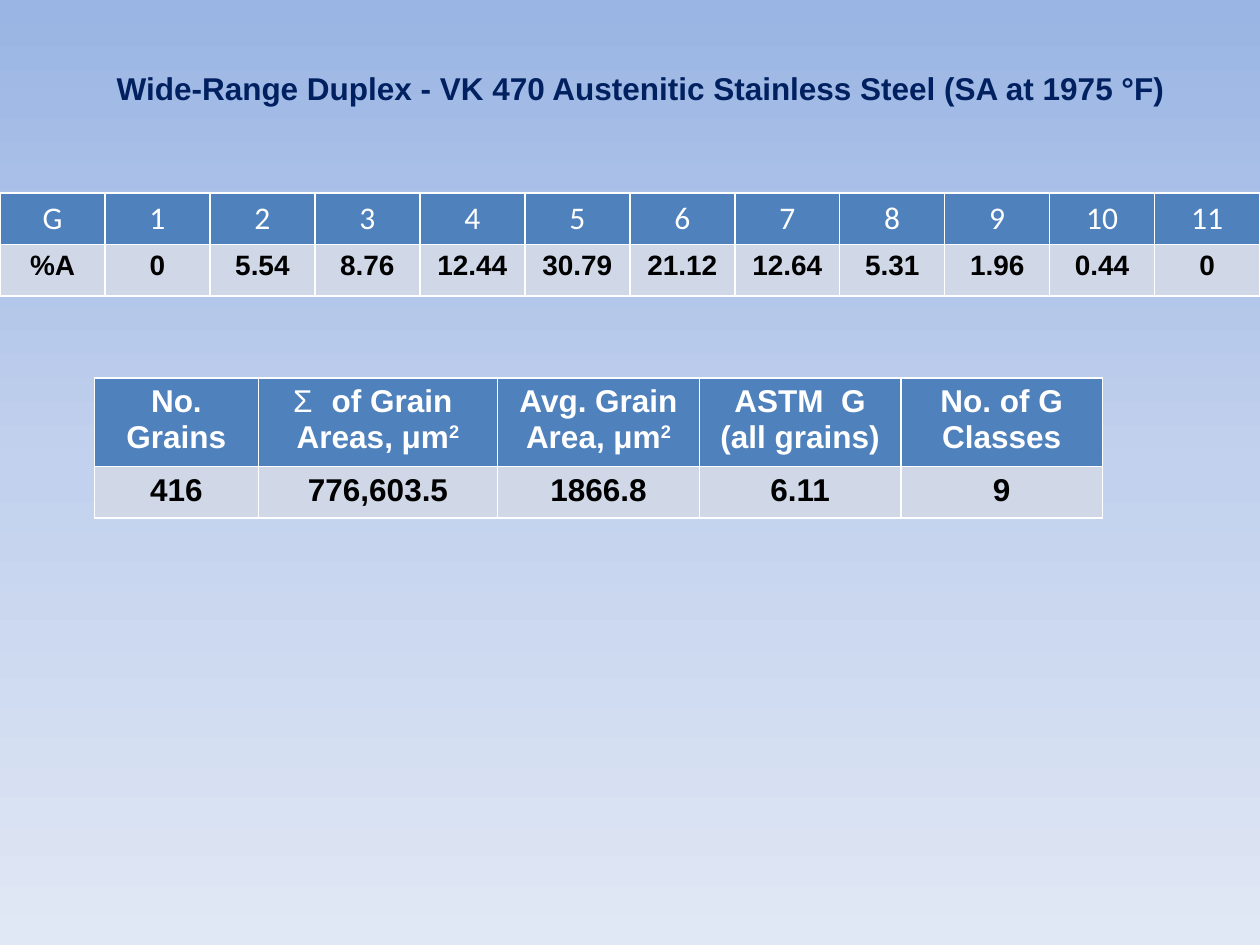
from copy import deepcopy

from lxml import etree
from pptx import Presentation
from pptx.dml.color import RGBColor
from pptx.enum.text import PP_ALIGN
from pptx.oxml.ns import qn
from pptx.util import Inches, Pt

CENTER = PP_ALIGN.CENTER
NAVY = RGBColor(0x00, 0x20, 0x60)
WHITE = RGBColor(0xFF, 0xFF, 0xFF)
BLACK = RGBColor(0x00, 0x00, 0x00)
HEADER_BLUE = RGBColor(0x4F, 0x81, 0xBD)
BODY_BLUE = RGBColor(0xD0, 0xD8, 0xE8)
BACKGROUND = [
    (0, RGBColor(0x9A, 0xB5, 0xE4)),
    (0.5, RGBColor(0xC2, 0xD1, 0xED)),
    (1, RGBColor(0xE1, 0xE8, 0xF5)),
]


def add_text(para, text, size=18, font="Arial", color=BLACK, bold=True, raised=False):
    para.alignment = CENTER
    span = para.add_run()
    span.text = text
    span.font.size = Pt(size)
    span.font.name = font
    span.font.bold = bold
    span.font.color.rgb = color
    if raised:
        span.font._element.set("baseline", "30000")


def add_grid(left, top, widths, heights, fills):
    """Add a table with thin white borders and one fill per row."""
    frame = page.shapes.add_table(len(heights), len(widths), Inches(left), Inches(top),
                                  Inches(sum(widths)), Inches(sum(heights)))
    table = frame.table
    for column, width in zip(table.columns, widths):
        column.width = Inches(width)
    for row, height, fill in zip(table.rows, heights, fills):
        row.height = Inches(height)
        for cell in row.cells:
            properties = cell._tc.get_or_add_tcPr()
            for side in ("a:lnL", "a:lnR", "a:lnT", "a:lnB"):
                line = etree.SubElement(properties, qn(side), w=str(Pt(1)))
                solid = etree.SubElement(line, qn("a:solidFill"))
                etree.SubElement(solid, qn("a:srgbClr"), val=str(WHITE))
            cell.fill.solid()
            cell.fill.fore_color.rgb = fill
    return table


deck = Presentation()
deck.slide_width = Inches(10)
deck.slide_height = Inches(7.5)
page = deck.slides.add_slide(deck.slide_layouts[6])

# Background gradient, top to bottom
fill = page.background.fill
fill.gradient()
fill.gradient_angle = 270
stop_list = page.element.find(".//" + qn("a:gsLst"))
stop_list.append(deepcopy(stop_list[-1]))
for stop, (position, color) in zip(fill.gradient_stops, BACKGROUND):
    stop.position = position
    stop.color.rgb = color

# Title
box = page.shapes.add_textbox(Inches(0.42), Inches(0.5), Inches(9.33), Inches(0.4))
box.text_frame.word_wrap = True
add_text(box.text_frame.paragraphs[0],
         "Wide-Range Duplex - VK 470 Austenitic Stainless Steel (SA at 1975 °F)", color=NAVY)

# Area percentage for each grain size number
areas = ["%A", "0", "5.54", "8.76", "12.44", "30.79", "21.12", "12.64",
         "5.31", "1.96", "0.44", "0"]
fills = [HEADER_BLUE, BODY_BLUE]
table = add_grid(0, 1.53, [10 / len(areas)] * len(areas), [0.41, 0.41], fills)
for index, area in enumerate(areas):
    add_text(table.cell(0, index).text_frame.paragraphs[0], str(index) if index else "G",
             font="Calibri", color=WHITE, bold=False)
    add_text(table.cell(1, index).text_frame.paragraphs[0], area, size=16)

# Grain summary: header lines, whether a raised 2 follows, value
summary = [
    (["No. Grains"], False, "416"),
    ([" of Grain Areas, μm"], True, "776,603.5"),
    (["Avg. Grain Area, μm"], True, "1866.8"),
    (["ASTM  G", "(all grains)"], False, "6.11"),
    (["No. of G Classes"], False, "9"),
]
table = add_grid(0.75, 3, [1.3, 1.9, 1.6, 1.6, 1.6], [0.7, 0.41], fills)
for index, (lines, squared, value) in enumerate(summary):
    frame = table.cell(0, index).text_frame
    for number, line in enumerate(lines):
        para = frame.add_paragraph() if number else frame.paragraphs[0]
        add_text(para, line, color=WHITE)
    if squared:
        add_text(para, "2", color=WHITE, raised=True)
    add_text(table.cell(1, index).text_frame.paragraphs[0], value)

# Sum sign as the bullet of the total area header
properties = table.cell(0, 1).text_frame.paragraphs[0]._p.get_or_add_pPr()
etree.SubElement(properties, qn("a:buFont"), typeface="Arial")
etree.SubElement(properties, qn("a:buChar"), char="Σ")

deck.save("out.pptx")
